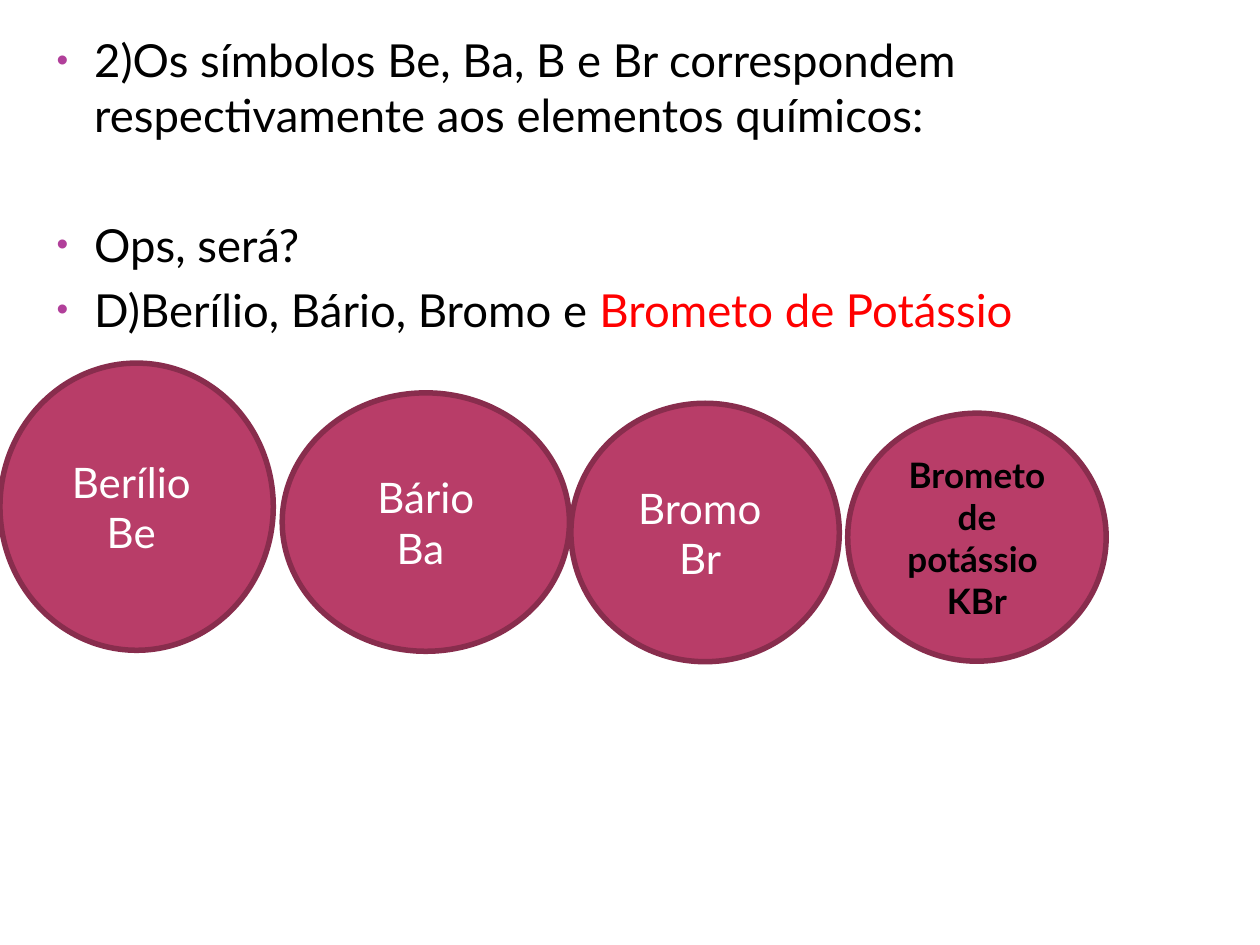
from lxml import etree
from pptx import Presentation
from pptx.dml.color import RGBColor
from pptx.enum.shapes import MSO_SHAPE
from pptx.enum.text import MSO_ANCHOR, PP_ALIGN
from pptx.oxml.ns import qn
from pptx.util import Cm, Pt

ELLIPSE = MSO_SHAPE.OVAL
MIDDLE = MSO_ANCHOR.MIDDLE
CENTER = PP_ALIGN.CENTER

FONT = "Lato"
BLACK = RGBColor(0x00, 0x00, 0x00)
WHITE = RGBColor(0xFF, 0xFF, 0xFF)
RED = RGBColor(0xFF, 0x00, 0x00)
PINK = RGBColor(0xB8, 0x3D, 0x68)
DARK_PINK = RGBColor(0x88, 0x2D, 0x4D)
PURPLE = RGBColor(0xB1, 0x3F, 0x9A)

# Space before each statement in points, then its coloured spans
STATEMENTS = [
    (0, [("2)Os símbolos Be, Ba, B e Br correspondem "
          "respectivamente aos elementos químicos:", BLACK)]),
    (43, [("Ops, será?", BLACK)]),
    (6, [("D)Berílio, Bário, Bromo e ", BLACK),
         ("Brometo de Potássio", RED)]),
]

# Left, top, width and height in centimetres, then the lines and their format
WHITE_LABEL = {"size": 24, "color": WHITE}
BLACK_LABEL = {"size": 20, "color": BLACK, "bold": True}
ELEMENTS = [
    ((0, 7.32, 5.51, 5.79), ["Berílio ", "Be "], WHITE_LABEL),
    ((5.69, 7.92, 5.79, 5.21), ["Bário", "Ba "], WHITE_LABEL),
    ((11.51, 8.13, 5.41, 5.21), ["Bromo ", "Br "], WHITE_LABEL),
    ((17.09, 8.33, 5.21, 5), ["Brometo de potássio ", "KBr"], BLACK_LABEL),
]


def add_span(para, text, size=26, color=BLACK, bold=False):
    span = para.add_run()
    span.text = text
    span.font.name = FONT
    span.font.size = Pt(size)
    span.font.bold = bold
    span.font.color.rgb = color


def set_bullet(para, indent=Cm(0.76)):
    properties = para._p.get_or_add_pPr()
    properties.set("marL", str(indent))
    properties.set("indent", str(-indent))
    color = etree.SubElement(properties, qn("a:buClr"))
    etree.SubElement(color, qn("a:srgbClr"), val=str(PURPLE))
    etree.SubElement(properties, qn("a:buSzPct"), val="73000")
    etree.SubElement(properties, qn("a:buFont"), typeface="Arial")
    etree.SubElement(properties, qn("a:buChar"), char="•")


def next_para(frame, index):
    return frame.add_paragraph() if index else frame.paragraphs[0]


def add_statements(page):
    box = page.shapes.add_textbox(Cm(0.89), Cm(0.53), Cm(20.47), Cm(17.4))
    frame = box.text_frame
    frame.word_wrap = True
    for index, (space, spans) in enumerate(STATEMENTS):
        para = next_para(frame, index)
        set_bullet(para)
        if space:
            para.space_before = Pt(space)
        for text, color in spans:
            add_span(para, text, color=color)


def add_element(page, place, lines, label):
    circle = page.shapes.add_shape(ELLIPSE, *map(Cm, place))
    circle.shadow.inherit = False
    circle.fill.solid()
    circle.fill.fore_color.rgb = PINK
    circle.line.color.rgb = DARK_PINK
    circle.line.width = Pt(3.15)
    frame = circle.text_frame
    frame.word_wrap = True
    frame.vertical_anchor = MIDDLE
    for index, line in enumerate(lines):
        para = next_para(frame, index)
        para.alignment = CENTER
        add_span(para, line, **label)


def main():
    deck = Presentation()
    deck.slide_width, deck.slide_height = Cm(25.4), Cm(19.05)
    page = deck.slides.add_slide(deck.slide_layouts[6])
    add_statements(page)
    for place, lines, label in ELEMENTS:
        add_element(page, place, lines, label)
    deck.save("out.pptx")


if __name__ == "__main__":
    main()
